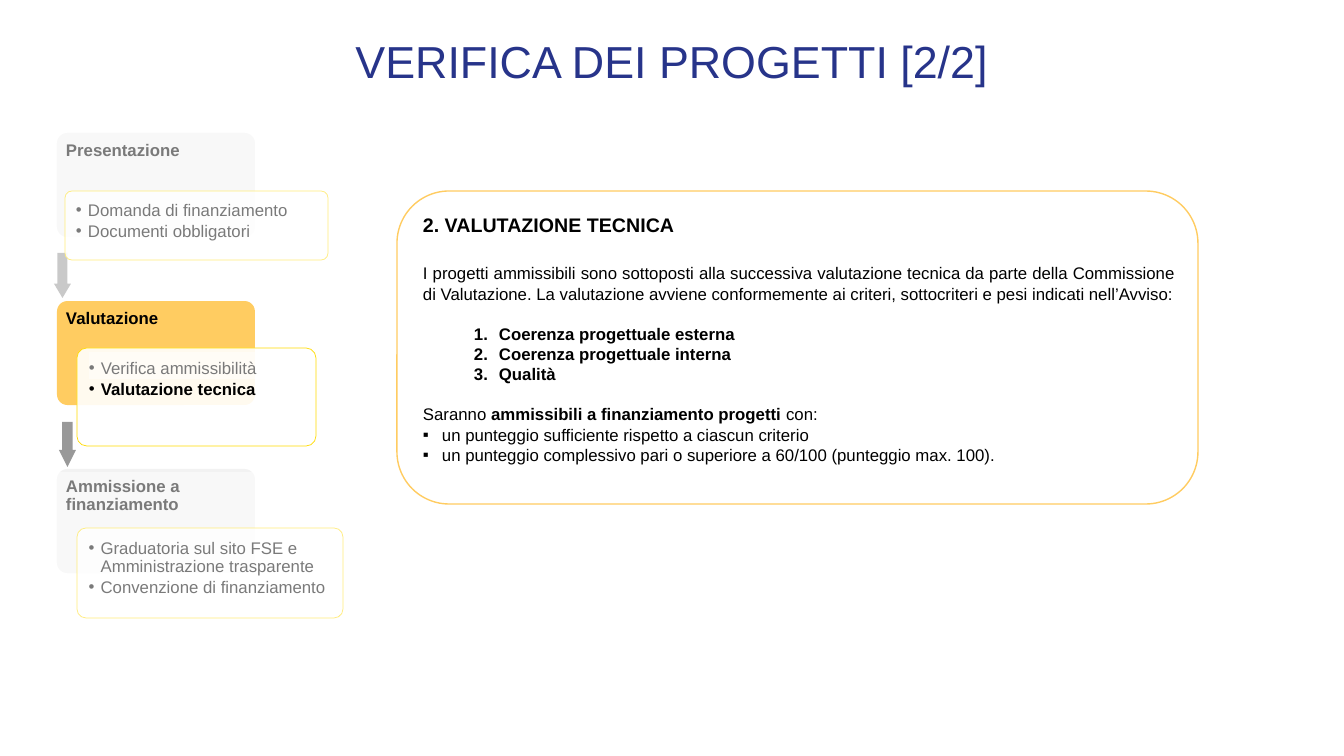
from lxml import etree
from pptx import Presentation
from pptx import util as u
from pptx.dml.color import RGBColor
from pptx.enum import shapes, text
from pptx.oxml import ns

PX = 914400 / 100.8
COLORS = {"black": "000000", "white": "FFFFFF", "grey": "F2F2F2", "arrow": "999999",
          "amber": "FFCC61", "yellow": "FFDB00", "title": "27348A"}
LEFT, JUSTIFY, CENTER = text.PP_ALIGN.LEFT, text.PP_ALIGN.JUSTIFY, text.PP_ALIGN.CENTER

prs = Presentation()
prs.slide_width, prs.slide_height = u.Emu(round(1344 * PX)), u.Emu(round(756 * PX))
slide = prs.slides.add_slide(prs.slide_layouts[6])


def add_box(kind, box, fill=None, opacity=100, line=None, width=1, inset=(10, 5)):
    """Place a preset shape, or a text box when kind is None; box is in px."""
    place = [u.Emu(round(v * PX)) for v in box]
    if kind is None:
        shape = slide.shapes.add_textbox(*place)
    else:
        shape = slide.shapes.add_shape(kind, *place)
        shape.shadow.inherit = False
        shape.fill.solid()
        shape.fill.fore_color.rgb = RGBColor.from_string(COLORS[fill])
        if opacity < 100:
            color = shape.fill._xPr.find(".//" + ns.qn("a:srgbClr"))
            etree.SubElement(color, ns.qn("a:alpha"), val=str(opacity * 1000))
        if line:
            shape.line.color.rgb = RGBColor.from_string(COLORS[line])
            shape.line.width = u.Pt(width)
        else:
            shape.line.fill.background()
    frame = shape.text_frame
    frame.word_wrap = True
    frame.vertical_anchor = text.MSO_ANCHOR.TOP
    frame.margin_left = frame.margin_right = u.Emu(round(inset[0] * PX))
    frame.margin_top = frame.margin_bottom = u.Emu(round(inset[1] * PX))
    return shape


def write(paragraph, runs, size=12, color="black", align=LEFT, before=0, spacing=None,
          bullet=None, margin=0, hang=0):
    """Fill a paragraph with (words, bold) runs; margin and hang are in px."""
    paragraph.alignment = align
    paragraph.space_before = u.Pt(before)
    if spacing:
        paragraph.line_spacing = spacing
    if bullet:
        props = paragraph._p.get_or_add_pPr()
        props.set("marL", str(round(margin * PX)))
        props.set("indent", str(round(-hang * PX)))
        if bullet == "1.":
            etree.SubElement(props, ns.qn("a:buAutoNum"), type="arabicPeriod")
        else:
            etree.SubElement(props, ns.qn("a:buFont"), typeface="Arial")
            etree.SubElement(props, ns.qn("a:buChar"), char=bullet)
    for words, bold in runs:
        run = paragraph.add_run()
        run.text = words
        run.font.name, run.font.size, run.font.bold = "Arial", u.Pt(size), bold
        run.font.color.rgb = RGBColor.from_string(COLORS[color])


RECT, ROUND = shapes.MSO_SHAPE.RECTANGLE, shapes.MSO_SHAPE.ROUNDED_RECTANGLE

# Arrows between the stages
for box, shaft, head in [((59, 422, 17, 45), 0.62, 1), ((54, 253, 17, 45), 0.59, 0.84)]:
    arrow = add_box(shapes.MSO_SHAPE.DOWN_ARROW, box, "arrow")
    arrow.adjustments[0], arrow.adjustments[1] = shaft, head

# Stages, each with its detail card
stages = [
    ("Presentazione", "grey", (65, 191, 263, 69),
     [("Domanda di finanziamento", False), ("Documenti obbligatori", False)]),
    ("Valutazione", "amber", (77, 348, 239, 98),
     [("Verifica ammissibilità", False), ("Valutazione tecnica", True)]),
    ("Ammissione a finanziamento", "grey", (77, 528, 266, 90),
     [("Graduatoria sul sito FSE e Amministrazione trasparente", False),
      ("Convenzione di finanziamento", False)]),
]
for i, (stage, fill, card_box, details) in enumerate(stages):
    header = add_box(ROUND, (57, 133 + 168 * i, 198, 104), fill, inset=(6, 6))
    header.adjustments[0] = 0.1
    write(header.text_frame.paragraphs[0], [(stage, True)], spacing=0.9)

    card = add_box(ROUND, card_box, "white", 90, "yellow", 0.5, inset=(9, 9))
    card.adjustments[0] = 0.1
    for j, detail in enumerate(details):
        frame = card.text_frame
        paragraph = frame.add_paragraph() if j else frame.paragraphs[0]
        write(paragraph, [detail], before=2 * j, spacing=0.9, bullet="•", margin=12, hang=12)

# Technical evaluation panel
add_box(ROUND, (397, 191, 801, 313), "white", line="amber")
evaluation = add_box(None, (413, 208, 773, 284)).text_frame
write(evaluation.paragraphs[0], [("2. VALUTAZIONE TECNICA", True)], 14, align=JUSTIFY)
write(evaluation.add_paragraph(), [(
    "I progetti ammissibili sono sottoposti alla successiva valutazione tecnica da parte "
    "della Commissione di Valutazione. La valutazione avviene conformemente ai criteri, "
    "sottocriteri e pesi indicati nell’Avviso:", False)], align=JUSTIFY, before=19)
criteria = ["Coerenza progettuale esterna", "Coerenza progettuale interna", "Qualità"]
for i, criterion in enumerate(criteria):
    write(evaluation.add_paragraph(), [(criterion, True)], before=0 if i else 14.4,
          bullet="1.", margin=76, hang=25)
write(evaluation.add_paragraph(),
      [("Saranno ", False), ("ammissibili a finanziamento progetti ", True), ("con:", False)],
      align=JUSTIFY, before=14.4)
for threshold in ["un punteggio sufficiente rispetto a ciascun criterio",
                  "un punteggio complessivo pari o superiore a 60/100 (punteggio max. 100)."]:
    write(evaluation.add_paragraph(), [(threshold, False)], align=JUSTIFY,
          bullet="▪", margin=19, hang=19)

# Veils that fade the inactive steps
for veil in [(51, 472, 308, 164), (51, 93, 318, 207), (89, 352, 217, 27)]:
    add_box(RECT, veil, "white", 48)

# Title
title = add_box(None, (106, 40, 1132, 69), inset=(0, 0)).text_frame
write(title.paragraphs[0], [("VERIFICA DEI PROGETTI [2/2]", False)], 32, "title", CENTER,
      spacing=0.9)

prs.save("out.pptx")
